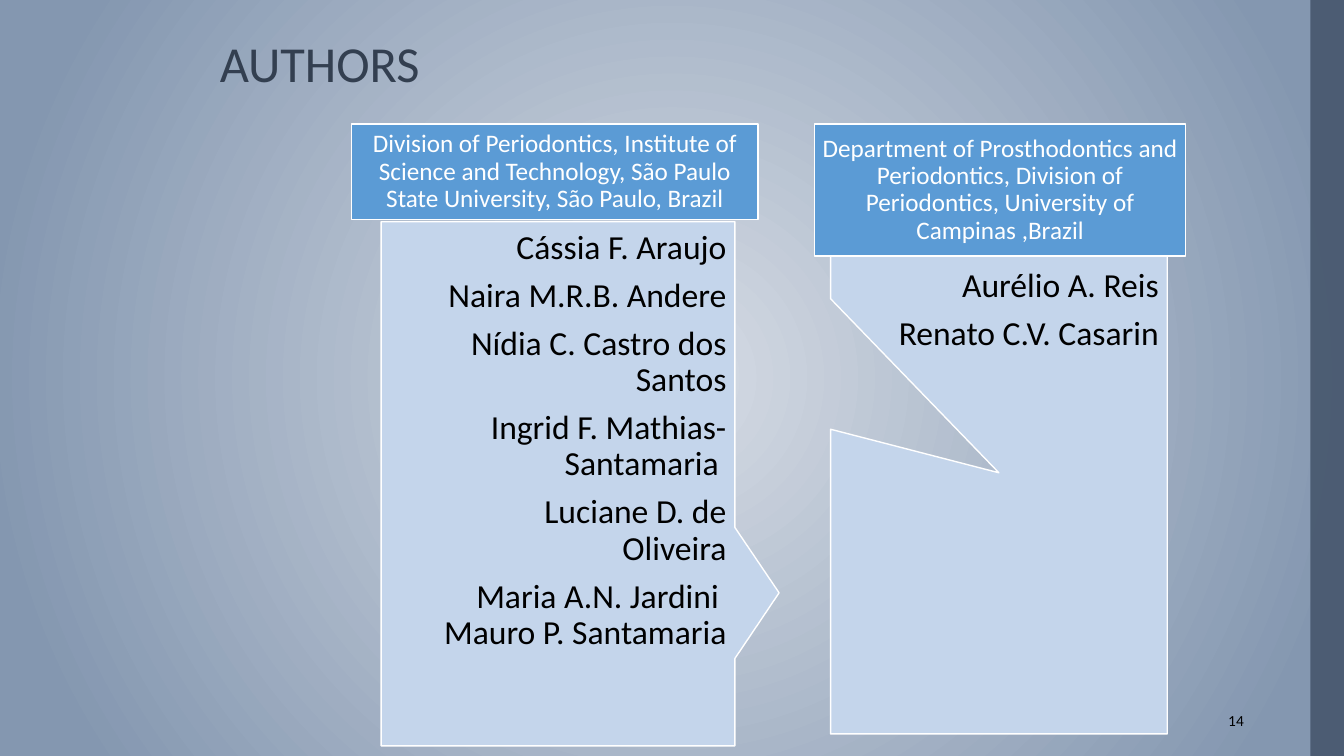
from lxml.etree import SubElement
from pptx import Presentation
from pptx.dml.color import RGBColor
from pptx.enum.shapes import MSO_SHAPE
from pptx.enum.text import MSO_ANCHOR, PP_ALIGN
from pptx.oxml.ns import qn
from pptx.util import Pt

WHITE, BLACK = "FFFFFF", "000000"
HEADER_TOP = 88.6


def color(hex_string):
    return RGBColor.from_string(hex_string)


def paint_background(page, center, edge):
    """Fill the page with a circular gradient that reaches the edge colour at 90 %."""
    fill = page.background.fill
    fill.gradient()
    for stop, position, shade in zip(fill.gradient_stops, (0, 0.9), (center, edge)):
        stop.position = position
        stop.color.rgb = color(shade)
    gradient = page.element.find(".//" + qn("a:gradFill"))
    for linear in gradient.findall(qn("a:lin")):
        gradient.remove(linear)
    circle = SubElement(gradient, qn("a:path"), path="circle")
    SubElement(circle, qn("a:fillToRect"), l="50000", t="50000", r="50000", b="50000")


def write(box, paragraphs, size, shade, align=PP_ALIGN.LEFT, anchor=MSO_ANCHOR.TOP,
          insets=(0, 0, 0, 0), spacing=0.9, after=0):
    """Write paragraphs into a box; insets run left, top, right, bottom."""
    frame = box.text_frame
    frame.word_wrap = True
    frame.vertical_anchor = anchor
    (frame.margin_left, frame.margin_top,
     frame.margin_right, frame.margin_bottom) = map(Pt, insets)
    for index, text in enumerate(paragraphs):
        para = frame.add_paragraph() if index else frame.paragraphs[0]
        para.text = text
        para.alignment = align
        para.line_spacing = spacing
        para.space_after = Pt(after)
        para.font.size = Pt(size)
        for span in para.runs:
            span.font.size = Pt(size)
            span.font.name = "Calibri"
            span.font.color.rgb = color(shade)


def add_label(page, place, text, size, shade, **layout):
    box = page.shapes.add_textbox(*map(Pt, place))
    write(box, [text], size, shade, **layout)


def add_block(page, kind, place, fill, line=None):
    block = page.shapes.add_shape(kind, *map(Pt, place))
    block.shadow.inherit = False
    block.fill.solid()
    block.fill.fore_color.rgb = color(fill)
    if line:
        block.line.color.rgb = color(line)
        block.line.width = Pt(1)
    else:
        block.line.fill.background()
    return block


def add_sidebar(page):
    sidebar = add_block(page, MSO_SHAPE.RECTANGLE, (936, 0, 24, 540), "44546A")
    shade = sidebar.fill._xPr.find(".//" + qn("a:srgbClr"))
    SubElement(shade, qn("a:alpha"), val="87000")


def add_header(page, left, width, height, text):
    header = add_block(page, MSO_SHAPE.RECTANGLE, (left, HEADER_TOP, width, height),
                       "5B9BD5", WHITE)
    write(header, [text], 18, WHITE, align=PP_ALIGN.CENTER, anchor=MSO_ANCHOR.MIDDLE,
          insets=(4.5,) * 4)


def add_author_callout(page, place, tip, names, left_inset, top_inset):
    """Add a callout listing names; tip is its point as shares of size from the centre."""
    callout = add_block(page, MSO_SHAPE.RECTANGULAR_CALLOUT, place, "C4D5EB", WHITE)
    callout.adjustments[0], callout.adjustments[1] = tip
    write(callout, names, 24, BLACK, align=PP_ALIGN.RIGHT,
          insets=(left_inset, top_inset, 6, 6), after=8.4)


def main():
    deck = Presentation()
    deck.slide_width, deck.slide_height = Pt(960), Pt(540)
    page = deck.slides.add_slide(deck.slide_layouts[6])

    paint_background(page, "D6DCE5", "8497B0")
    add_sidebar(page)
    add_label(page, (157, 28, 739, 44), "AUTHORS", 36, "333F50")

    add_author_callout(page, (593.3, 151.2, 240.5, 373), (0, 0),
                       ["Aurélio A. Reis", "Renato C.V. Casarin"], 36, 40.5)
    add_header(page, 581.8, 265, 94.3,
               "Department of Prosthodontics and Periodontics, Division of "
               "Periodontics, University of Campinas ,Brazil")

    add_author_callout(page, (272.2, 158.4, 252.7, 374.4), (0.625, 0.208),
                       ["Cássia F. Araujo", "Naira M.R.B. Andere",
                        "Nídia C. Castro dos Santos", "Ingrid F. Mathias-Santamaria ",
                        "Luciane D. de Oliveira",
                        "Maria A.N. Jardini \vMauro P. Santamaria"], 37.5, 6)
    add_header(page, 251.3, 290.2, 68.4,
               "Division of Periodontics, Institute of Science and Technology, "
               "São Paulo State University, São Paulo, Brazil")

    add_label(page, (847.4, 500.4, 48.2, 28.8), "14", 11, BLACK, align=PP_ALIGN.RIGHT,
              anchor=MSO_ANCHOR.MIDDLE, insets=(7.2, 3.6, 7.2, 3.6), spacing=1.0)
    deck.save("out.pptx")


if __name__ == "__main__":
    main()
